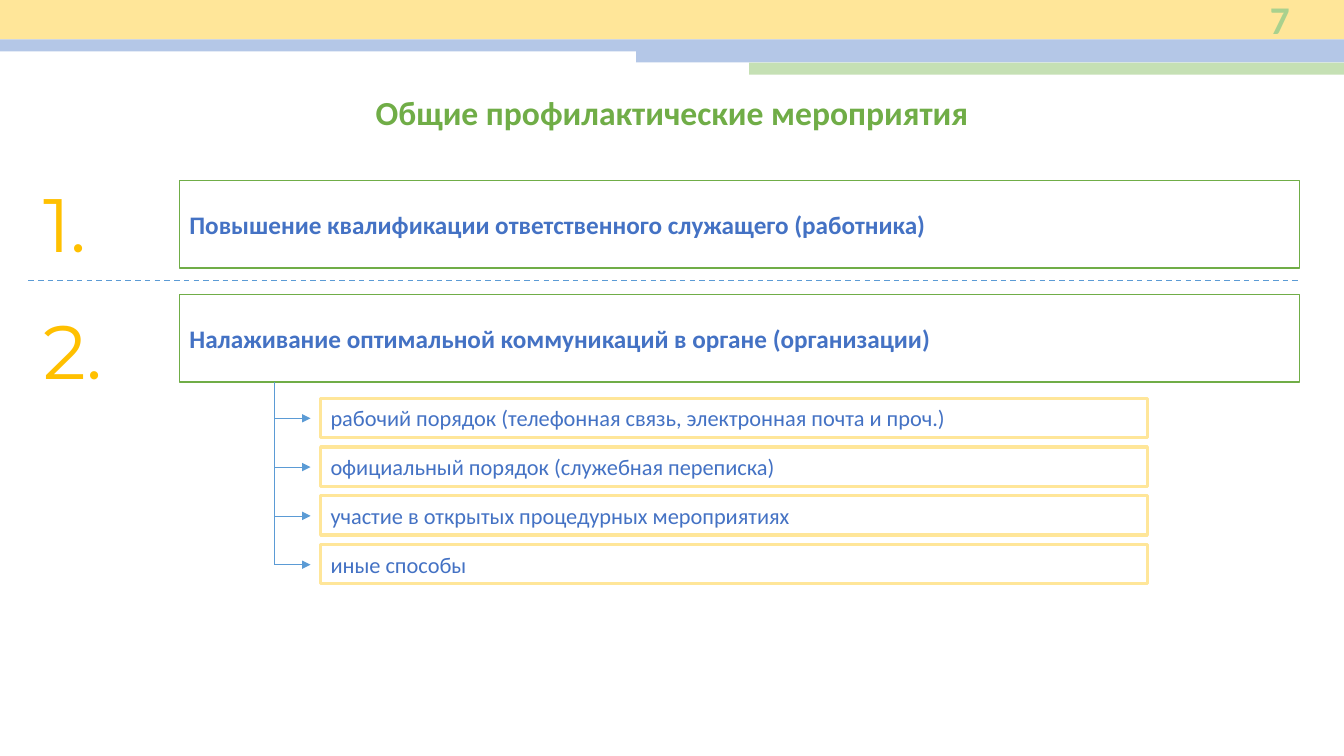
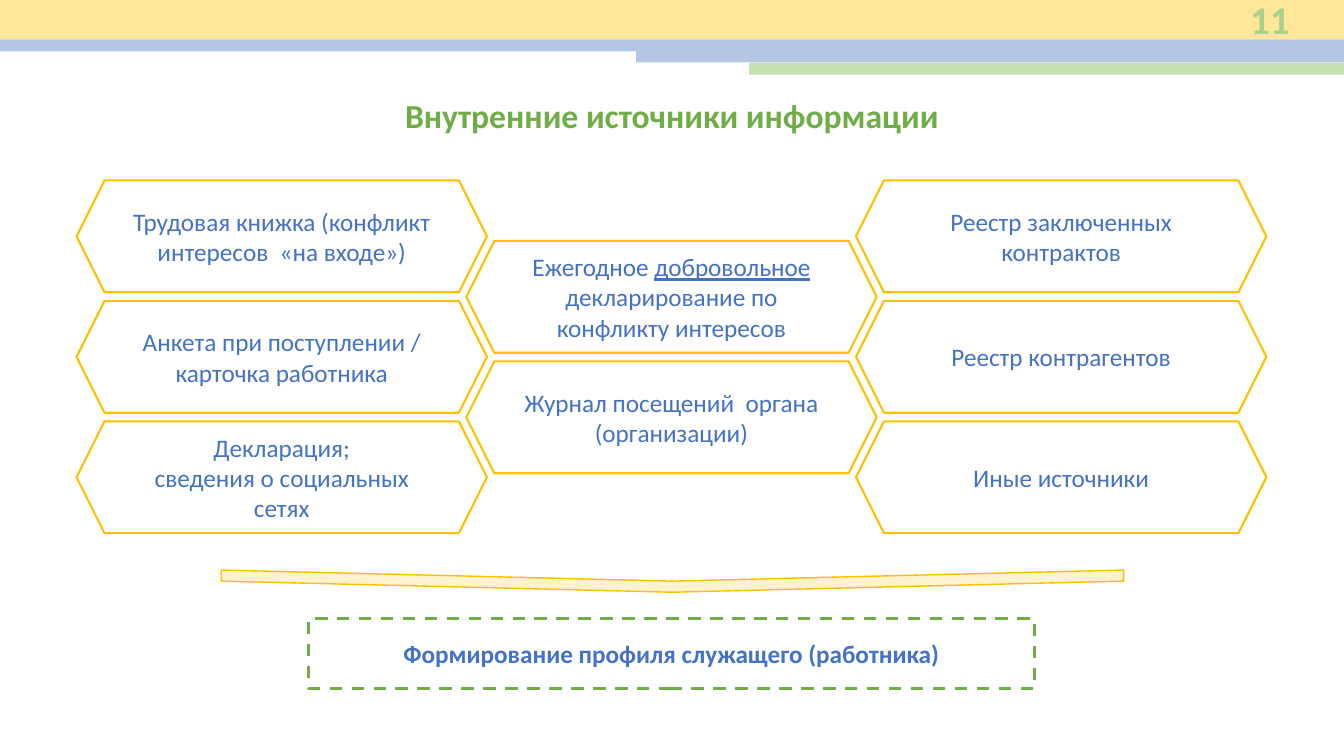
from lxml import etree
from pptx import Presentation
from pptx.dml.color import RGBColor
from pptx.enum import dml, shapes as kinds, text as txt
from pptx.oxml.ns import qn
from pptx.util import Inches, Pt


class Theme:
    sand, sky, mint = "FFE699", "B4C7E7", "C5E0B4"
    green, leaf, blue, steel = "70AD47", "A9D18E", "4472C4", "5B9BD5"
    gold, cream = "FFC000", "FFF2CC"
    body, digit = "Calibri", "Montserrat"
    small, text, title, page, huge = 16, 18, 24, 28, 54


KIND = kinds.MSO_SHAPE
ALIGN = txt.PP_ALIGN
DASH = dml.MSO_LINE.DASH


def write(item, words, size=Theme.text, color=Theme.blue, bold=False,
          align=ALIGN.CENTER, face=Theme.body, anchor=txt.MSO_ANCHOR.MIDDLE):
    """Fill a shape with text: a newline starts a paragraph, _..._ underlines."""
    frame = item.text_frame
    look = {"word_wrap": True, "auto_size": txt.MSO_AUTO_SIZE.NONE,
            "vertical_anchor": anchor}
    for key, val in look.items():
        setattr(frame, key, val)
    for row, line in enumerate(words.split("\n")):
        para = frame.add_paragraph() if row else frame.paragraphs[0]
        para.alignment = align
        for part, piece in enumerate(line.split("_")):
            run = para.add_run()
            run.text = piece
            style = {"name": face, "size": Pt(size), "bold": bold,
                     "underline": part % 2 == 1}
            for key, val in style.items():
                setattr(run.font, key, val)
            run.font.color.rgb = RGBColor.from_string(color)


def draw(slide, kind, place, fill=None, line=None, width=1, dash=None, tail=False):
    """Add a preset shape at (left, top, width, height);
    with kind None, a line from (x1, y1) to (x2, y2)."""
    spot = [Inches(n) for n in place]
    if kind is None:
        item = slide.shapes.add_connector(kinds.MSO_CONNECTOR.STRAIGHT, *spot)
    else:
        item = slide.shapes.add_shape(kind, *spot)
        item.shadow.inherit = False
        if fill:
            item.fill.solid()
            item.fill.fore_color.rgb = RGBColor.from_string(fill)
        else:
            item.fill.background()
    if line:
        item.line.color.rgb = RGBColor.from_string(line)
        item.line.width = Pt(width)
        if dash:
            item.line.dash_style = dash
    else:
        item.line.fill.background()
    if kind is None:
        props = item.element.spPr
        if tail:
            etree.SubElement(props.find(qn("a:ln")), qn("a:tailEnd"), type="triangle")
        etree.SubElement(props, qn("a:effectLst"))
    return item


deck = Presentation()
deck.slide_width, deck.slide_height = Inches(13.33), Inches(7.5)
layout = deck.slide_layouts[5]

# Titles and page numbers
slides = []
for title, top, page in [("Общие профилактические мероприятия", 0.86, "7"),
                         ("Внутренние источники информации", 0.89, "11")]:
    slide = deck.slides.add_slide(layout)
    head = slide.shapes.title
    spot = {"left": 0.6, "top": top, "width": 12.13, "height": 0.5}
    for key, val in spot.items():
        setattr(head, key, Inches(val))
    write(head, title, Theme.title, Theme.green, True)
    label = slide.shapes.add_textbox(Inches(11.9), 0, Inches(0.99), Inches(0.38))
    write(label, page, Theme.page, Theme.leaf, True, ALIGN.RIGHT)
    slides.append(slide)
steps, sources = slides

# Top bands, moved to the layout that both slides share
bands = [(0, 0, 0.39, Theme.sand), (0, 0.39, 0.12, Theme.sky),
         (6.31, 0.5, 0.12, Theme.sky), (7.43, 0.62, 0.12, Theme.mint)]
for rank, (left, top, high, color) in enumerate(bands):
    band = draw(steps, KIND.RECTANGLE, (left, top, 13.33 - left, high), color).element
    band.nvSpPr.cNvPr.set("id", str(100 + rank))
    layout.shapes.element.insert(2 + rank, band)

# Slide with numbered steps
heads = [("1.", 1.71, 1.79, "Повышение квалификации ответственного служащего (работника)"),
         ("2.", 2.97, 2.92, "Налаживание оптимальной коммуникаций в органе (организации)")]
for mark, high, top, words in heads:
    box = draw(steps, KIND.RECTANGLE, (1.78, top, 11.11, 0.87), line=Theme.green)
    write(box, words, bold=True, align=ALIGN.LEFT)
    label = steps.shapes.add_textbox(Inches(0.33), Inches(high), Inches(1.25), Inches(1.01))
    write(label, mark, Theme.huge, Theme.gold, align=ALIGN.LEFT,
          face=Theme.digit, anchor=txt.MSO_ANCHOR.TOP)
draw(steps, None, (0.28, 2.78, 12.89, 2.78), line=Theme.steel, dash=DASH)

ways = ["рабочий порядок (телефонная связь, электронная почта и проч.)",
        "официальный порядок (служебная переписка)",
        "участие в открытых процедурных мероприятиях",
        "иные способы"]
trunk = 2.72
for row, words in enumerate(ways):
    top = 3.95 + 0.484 * row
    mid = top + 0.2
    draw(steps, None, (trunk, mid, 3.08, mid), line=Theme.steel, width=0.5, tail=True)
    box = draw(steps, KIND.RECTANGLE, (3.18, top, 8.2, 0.39), line=Theme.sand, width=2.25)
    write(box, words, Theme.small, align=ALIGN.JUSTIFY)
draw(steps, None, (trunk, 3.79, trunk, mid), line=Theme.steel, width=0.5)

# Slide with information sources
grid = [(1.79, ["Трудовая книжка (конфликт интересов  «на входе»)",
                "Анкета при поступлении / карточка работника",
                "Декларация;\nсведения о социальных сетях"]),
        (2.39, ["Ежегодное _добровольное_ декларирование по конфликту интересов",
                "Журнал посещений  органа (организации)"]),
        (1.79, ["Реестр заключенных контрактов",
                "Реестр контрагентов",
                "Иные источники"])]
for col, (top, cells) in enumerate(grid):
    for row, words in enumerate(cells):
        place = (0.76 + 3.865 * col, top + 1.195 * row, 4.07, 1.11)
        write(draw(sources, KIND.HEXAGON, place, line=Theme.gold, width=1.5), words)

brace = draw(sources, KIND.CHEVRON, (6.56, 1.29, 0.22, 8.95), Theme.cream, Theme.gold)
brace.rotation = 90
result = draw(sources, KIND.RECTANGLE, (3.06, 6.14, 7.2, 0.69),
              line=Theme.green, width=2.25, dash=DASH)
write(result, "Формирование профиля служащего (работника)", bold=True)

deck.save("out.pptx")
